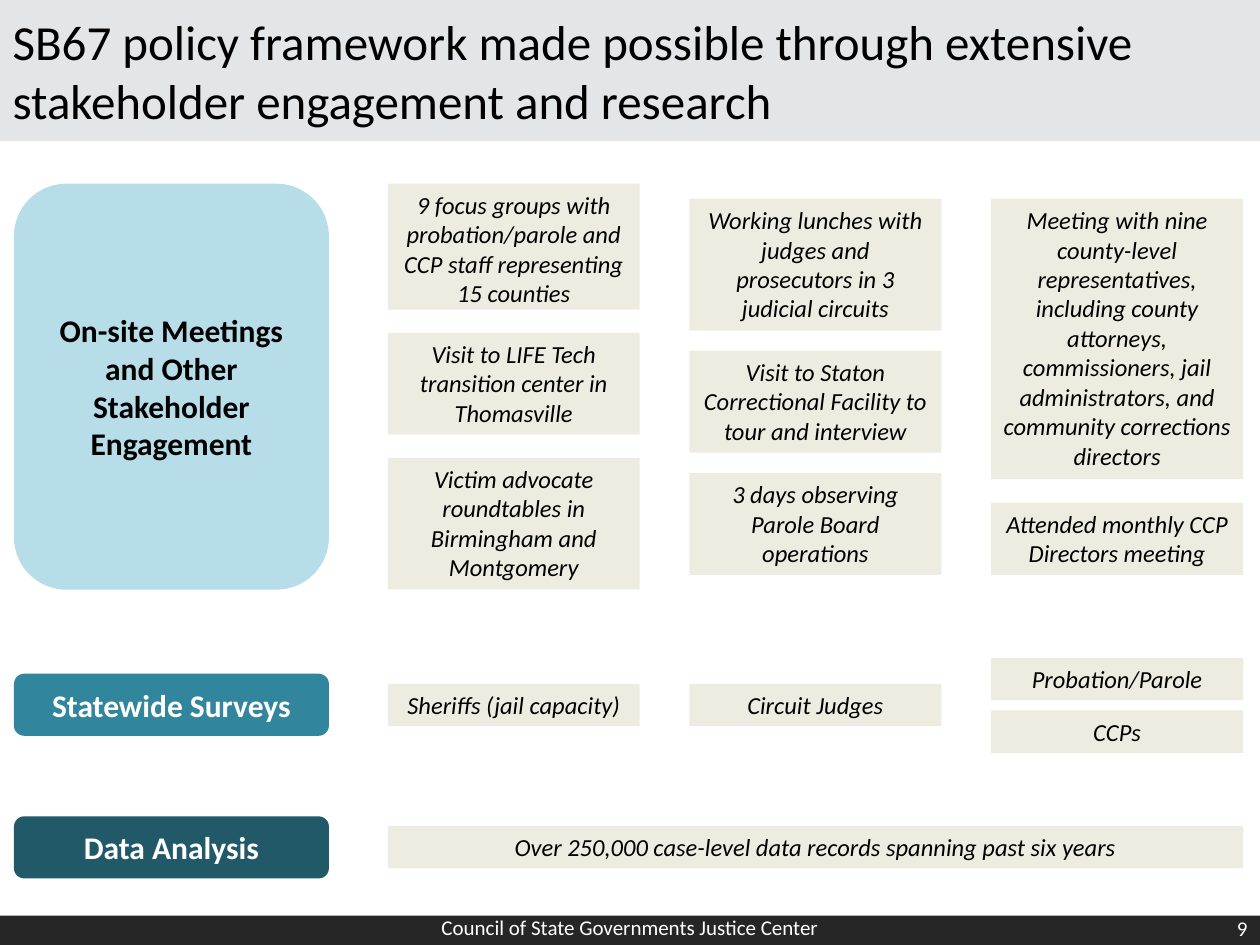
from pptx import Presentation
from pptx.dml.color import RGBColor
from pptx.enum import shapes, text
from pptx.util import Pt

BLACK = RGBColor(0x00, 0x00, 0x00)
WHITE = RGBColor(0xFF, 0xFF, 0xFF)
DARK = RGBColor(0x26, 0x26, 0x26)
GREY = RGBColor(0xE2, 0xE6, 0xE9)
SAND = RGBColor(0xEE, 0xEC, 0xE1)
PALE = RGBColor(0xB7, 0xDE, 0xE8)
TEAL = RGBColor(0x31, 0x85, 0x9C)
DEEP = RGBColor(0x21, 0x59, 0x68)

# Content
TITLE = ("SB67 policy framework made possible through extensive "
         "stakeholder engagement and research")
FOOTER = "Council of State Governments Justice Center"
PAGE = "9"

# Row labels: text, top, height, fill, font colour
LABELS = [
    ("On-site Meetings and Other Stakeholder Engagement", 105, 232, PALE, BLACK),
    ("Statewide Surveys", 385, 35.5, TEAL, WHITE),
    ("Data Analysis", 466.5, 35.5, DEEP, WHITE),
]

# Stacks of cards: column, columns spanned, top, gap, (text, height)
ONE, TWO, THREE, FOUR, NINE = 24.2, 41.2, 58.2, 75.2, 160.2
STACKS = [
    (0, 1, 105, 13.2, [
        ("9 focus groups with probation/parole and CCP staff representing "
         "15 counties", 72),
        ("Visit to LIFE Tech transition center in Thomasville", THREE),
        ("Victim advocate roundtables in Birmingham and Montgomery", FOUR)]),
    (1, 1, 113.7, 11.6, [
        ("Working lunches with judges and prosecutors in 3 judicial circuits",
         FOUR),
        ("Visit to Staton Correctional Facility to tour and interview", THREE),
        ("3 days observing Parole Board operations", THREE)]),
    (2, 1, 113.7, 13.4, [
        ("Meeting with nine county-level representatives, including county "
         "attorneys, commissioners, jail administrators, and community "
         "corrections directors", NINE),
        ("Attended monthly CCP Directors meeting", TWO)]),
    (0, 1, 390.8, 0, [("Sheriffs (jail capacity)", ONE)]),
    (1, 1, 390.8, 0, [("Circuit Judges", ONE)]),
    (2, 1, 375.9, 5.9, [("Probation/Parole", ONE), ("CCPs", ONE)]),
    (0, 3, 472, 0, [("Over 250,000 case-level data records spanning past six "
                     "years", ONE)]),
]
LEFT, STEP, WIDE = 221.6, 172.4, 144

# Text formats
MID, TOP = text.MSO_ANCHOR.MIDDLE, text.MSO_ANCHOR.TOP
CARD = {"size": Pt(14), "italic": True}
LABEL = {"size": Pt(18), "bold": True}
SMALL = {"size": Pt(12)}
HEAD = {"size": Pt(28)}

prs = Presentation()
prs.slide_width, prs.slide_height = Pt(720), Pt(540)
slide = prs.slides.add_slide(prs.slide_layouts[5])


def place(shape, box):
    shape.left, shape.top, shape.width, shape.height = map(Pt, box)


def write(shape, words, form, color=BLACK, anchor=MID,
          align=text.PP_ALIGN.CENTER):
    frame = shape.text_frame
    frame.text = words
    frame.word_wrap = True
    frame.auto_size = text.MSO_AUTO_SIZE.NONE
    frame.vertical_anchor = anchor
    para = frame.paragraphs[0]
    para.alignment = align
    font = para.runs[0].font
    for key, val in {"name": "Calibri", **form}.items():
        setattr(font, key, val)
    font.color.rgb = color


def draw(box, fill, kind=shapes.MSO_SHAPE.RECTANGLE):
    shape = slide.shapes.add_shape(kind, *map(Pt, box))
    shape.shadow.inherit = False
    shape.fill.solid()
    shape.fill.fore_color.rgb = fill
    shape.line.fill.background()
    return shape


# Title band
title = slide.shapes.title
place(title, (0, 0, 720, 80.6))
title.fill.solid()
title.fill.fore_color.rgb = GREY
write(title, TITLE, HEAD, align=text.PP_ALIGN.LEFT)

# Footer bar, centre text and page number
draw((0, 523.2, 720, 16.8), DARK)
for words, box, align in [
        (FOOTER, (232, 515, 256, 30), text.PP_ALIGN.CENTER),
        (PAGE, (552, 516, 168, 29), text.PP_ALIGN.RIGHT)]:
    note = slide.shapes.add_textbox(*map(Pt, box))
    write(note, words, SMALL, WHITE, align=align)

# Row labels
for words, top, high, fill, color in LABELS:
    label = draw((8, top, 180, high), fill,
                 shapes.MSO_SHAPE.ROUNDED_RECTANGLE)
    write(label, words, LABEL, color)

# Cards
for col, span, top, gap, cards in STACKS:
    for words, high in cards:
        wide = WIDE + (span - 1) * STEP
        card = draw((LEFT + col * STEP, top, wide, high), SAND)
        write(card, words, CARD, anchor=TOP)
        top += high + gap

prs.save("out.pptx")
